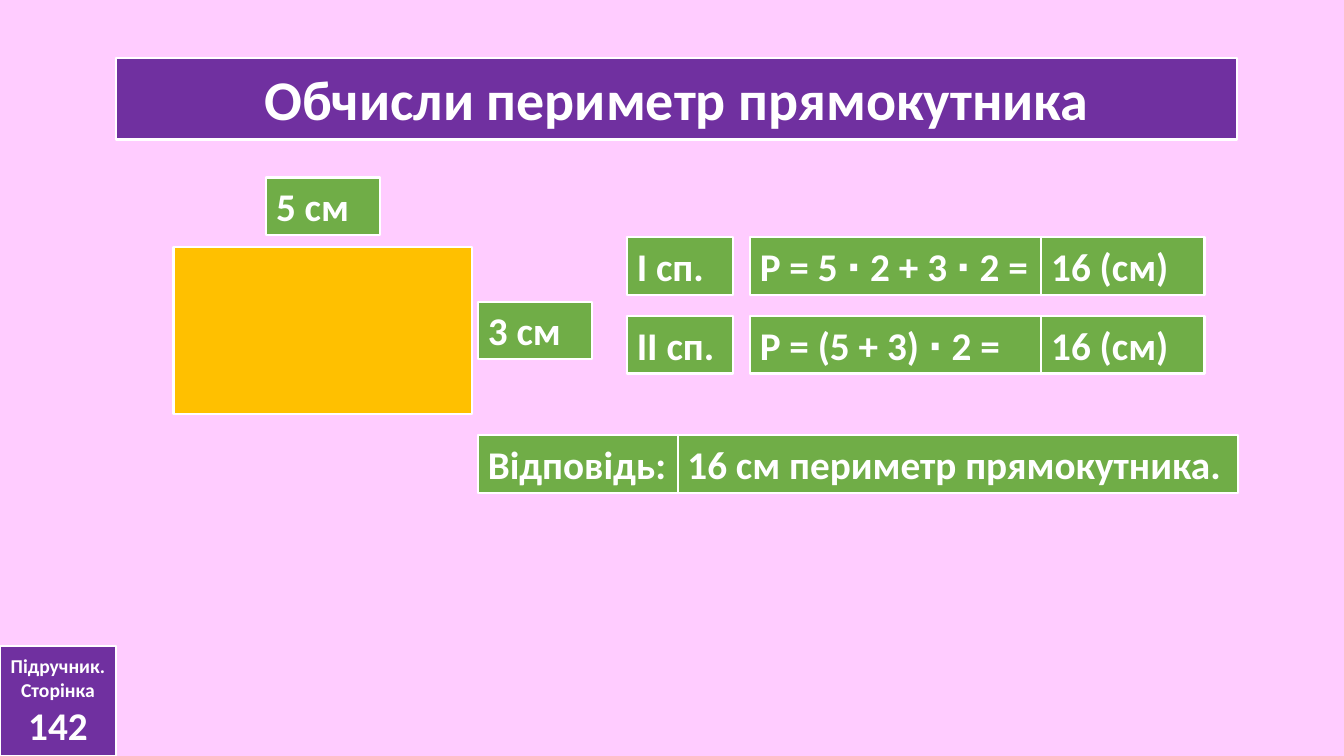
import pptx
import pptx.dml.color
import pptx.enum.shapes
import pptx.enum.text
import pptx.util

Pt = pptx.util.Pt
ALIGN = pptx.enum.text.PP_ALIGN
ANCHOR = pptx.enum.text.MSO_ANCHOR
AUTO_SIZE = pptx.enum.text.MSO_AUTO_SIZE

WHITE, PURPLE, GREEN = "FFFFFF", "7030A0", "70AD47"
AMBER, PINK = "FFC000", "FFCCFF"
LABEL_HEIGHT = 41.2


def color(hex_value):
    return pptx.dml.color.RGBColor.from_string(hex_value)


def paint(shape, fill):
    shape.fill.solid()
    shape.fill.fore_color.rgb = color(fill)
    shape.line.color.rgb = color(WHITE)
    shape.line.width = Pt(1.5)


def add_rectangle(slide, left, top, width, height, fill):
    shape = slide.shapes.add_shape(
        pptx.enum.shapes.MSO_SHAPE.RECTANGLE,
        Pt(left), Pt(top), Pt(width), Pt(height))
    shape.shadow.inherit = False
    paint(shape, fill)
    return shape


def write(shape, *lines, sizes=(28,), align=ALIGN.LEFT, anchor=ANCHOR.TOP,
          auto_size=AUTO_SIZE.NONE):
    """Write one paragraph per line, each with its own size."""
    frame = shape.text_frame
    frame.word_wrap = True
    frame.auto_size = auto_size
    frame.vertical_anchor = anchor
    frame.text = "\n".join(lines)
    for para, size in zip(frame.paragraphs, sizes):
        para.alignment = align
        for span in para.runs:
            span.font.name = "Calibri"
            span.font.size = Pt(size)
            span.font.bold = True
            span.font.color.rgb = color(WHITE)


def add_label(slide, text, left, top, width):
    label = add_rectangle(slide, left, top, width, LABEL_HEIGHT, GREEN)
    write(label, text, auto_size=AUTO_SIZE.SHAPE_TO_FIT_TEXT)


def add_title(slide, text, left, top, width, height):
    title = slide.shapes.title
    title.left, title.top = Pt(left), Pt(top)
    title.width, title.height = Pt(width), Pt(height)
    paint(title, PURPLE)
    write(title, text, sizes=(40,), align=ALIGN.CENTER, anchor=ANCHOR.MIDDLE)


def add_page_badge(slide, left, top, width, height):
    badge = add_rectangle(slide, left, top, width, height, PURPLE)
    write(badge, "Підручник.", "Сторінка", "142", sizes=(14, 14, 28),
          align=ALIGN.CENTER, anchor=ANCHOR.MIDDLE)


def add_measured_rectangle(slide, left, top, width, height):
    """Draw the rectangle with its length above and its width at the right."""
    add_rectangle(slide, left, top, width, height, AMBER)
    add_label(slide, "5 см", left + 66.2, top - 49.7, 81.4)
    add_label(slide, "3 см", left + width + 4.3, top + 38.9, 81.4)


def add_solutions(slide, left, top):
    solutions = [("І сп.", "Р = 5 ∙ 2 + 3 ∙ 2 =", "16 (см)"),
                 ("ІІ сп.", "Р = (5 + 3) ∙ 2 =", "16 (см)")]
    columns = [(0, 75.6), (87.8, 208.2), (296, 116.6)]
    for row, texts in enumerate(solutions):
        for text, (offset, width) in zip(texts, columns):
            add_label(slide, text, left + offset, top + row * 56.2, width)


def add_answer(slide, left, top):
    add_label(slide, "Відповідь:", left, top, 144.7)
    add_label(slide, "16 см периметр прямокутника.", left + 142.6, top, 400.4)


def main():
    deck = pptx.Presentation()
    deck.slide_width, deck.slide_height = Pt(960), Pt(540)
    page = deck.slides.add_slide(deck.slide_layouts.get_by_name("Title Only"))
    page.background.fill.solid()
    page.background.fill.fore_color.rgb = color(PINK)

    add_page_badge(page, 0, 461.5, 82.8, 78.5)
    add_title(page, "Обчисли периметр прямокутника", 82.8, 41.2, 800.8, 58.5)
    add_measured_rectangle(page, 123.9, 176.5, 213.2, 119)
    add_solutions(page, 447.8, 169.4)
    add_answer(page, 341.4, 310.8)
    deck.save("out.pptx")


if __name__ == "__main__":
    main()
